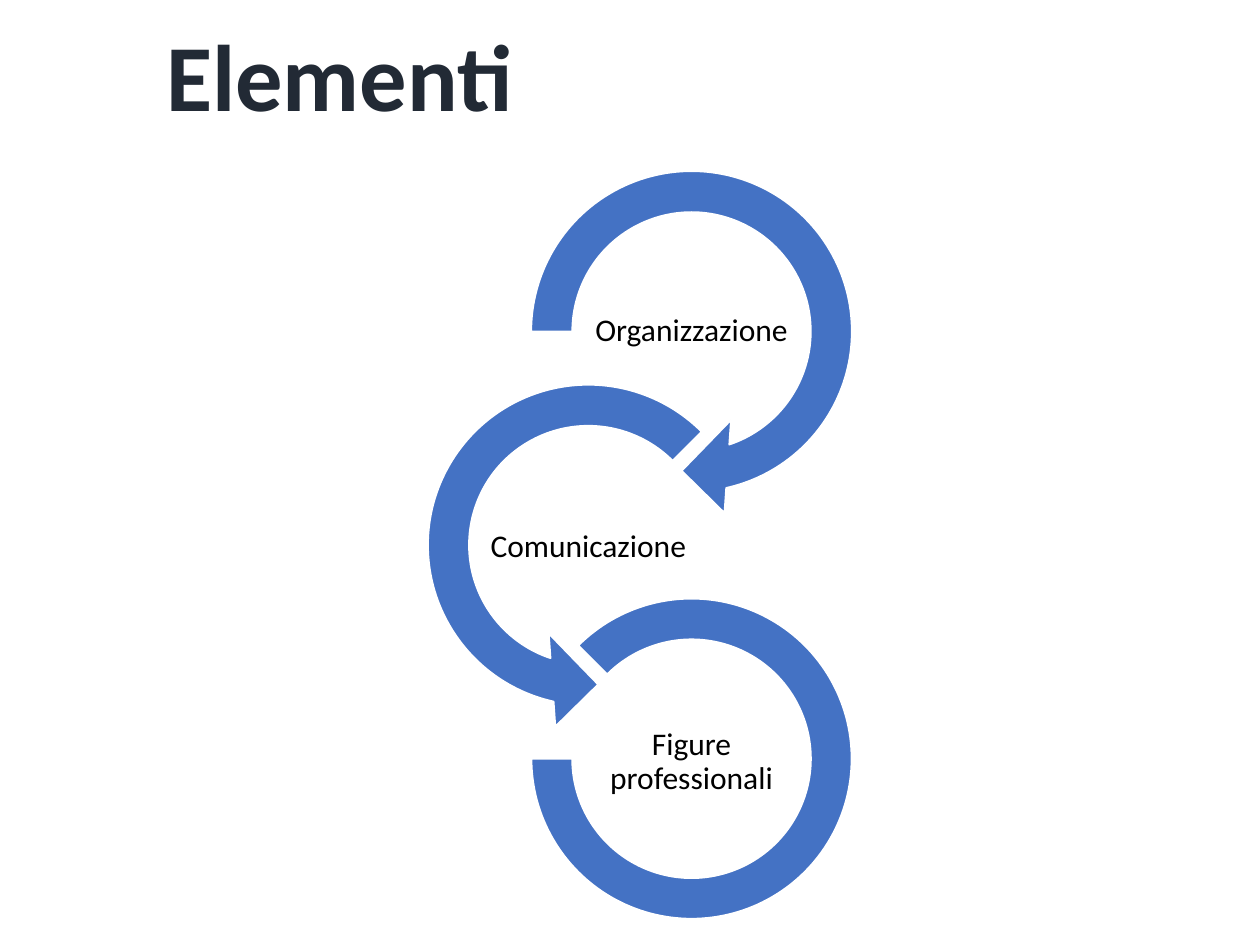
from pptx import Presentation
from pptx.dml.color import RGBColor
from pptx.enum.shapes import MSO_SHAPE as SHAPE
from pptx.enum.text import MSO_ANCHOR as ANCHOR, MSO_AUTO_SIZE as AUTO, PP_ALIGN as ALIGN
from pptx.util import Pt

BLUE = RGBColor(0x44, 0x72, 0xC4)
NAVY = RGBColor(0x22, 0x2A, 0x35)
BLACK = RGBColor(0, 0, 0)
WHITE = RGBColor(0xFF, 0xFF, 0xFF)

RIGHT_X, LEFT_X = 395.2, 336.2
FIRST_Y, STEP_Y = 189.4, 122.1
ARROW_SIZE, ARC_SIZE = 213, 182.9
LABEL_HEIGHT = 59

# preset, size, centre x, adjustments, label, label width
RINGS = [
    (SHAPE.CIRCULAR_ARROW, ARROW_SIZE, RIGHT_X,
     (0.11, 11.42, 45, 108, 0.125), "Organizzazione", 118),
    (SHAPE.LEFT_CIRCULAR_ARROW, ARROW_SIZE, LEFT_X,
     (0.11, 11.42, 63, 189, 0.125), "Comunicazione", 118),
    (SHAPE.BLOCK_ARC, ARC_SIZE, RIGHT_X,
     (135, 108, 0.127), "Figure professionali", 144),
]


def set_all(obj, values):
    for name, value in values.items():
        setattr(obj, name, value)


def centred(x, y, width, height):
    """Return left, top, width and height of a box around a centre."""
    return Pt(x - width / 2), Pt(y - height / 2), Pt(width), Pt(height)


class Deck:
    font = "Calibri"
    label_frame = {"word_wrap": True, "vertical_anchor": ANCHOR.MIDDLE,
                   "margin_left": Pt(1), "margin_right": Pt(1),
                   "margin_top": Pt(1), "margin_bottom": Pt(1)}
    title_frame = {"word_wrap": True, "vertical_anchor": ANCHOR.MIDDLE,
                   "auto_size": AUTO.NONE}

    def __init__(self, width, height):
        self.prs = Presentation()
        set_all(self.prs, {"slide_width": Pt(width), "slide_height": Pt(height)})
        self.s = self.prs.slides.add_slide(self.prs.slide_layouts[5])

    def fill_text(self, tf, text, frame, align, size, color, bold=False):
        set_all(tf, frame)
        p = tf.paragraphs[0]
        set_all(p, {"alignment": align, "line_spacing": 0.9})
        r = p.add_run()
        r.text = text
        set_all(r.font, {"name": self.font, "size": Pt(size), "bold": bold})
        r.font.color.rgb = color

    def title(self, text, left, top, width, height):
        sp = self.s.shapes.title
        set_all(sp, {"left": Pt(left), "top": Pt(top),
                     "width": Pt(width), "height": Pt(height)})
        self.fill_text(sp.text_frame, text, self.title_frame, ALIGN.LEFT, 54, NAVY, True)

    def group(self):
        return self.s.shapes.add_group_shape().shapes

    def ring(self, shapes, preset, x, y, size, adjustments):
        sp = shapes.add_shape(preset, *centred(x, y, size, size))
        for i, value in enumerate(adjustments):
            sp.adjustments[i] = value
        sp.shadow.inherit = False
        sp.fill.solid()
        sp.fill.fore_color.rgb = BLUE
        sp.line.color.rgb = WHITE
        sp.line.width = Pt(1)

    def label(self, shapes, text, x, y, width):
        sp = shapes.add_textbox(*centred(x, y, width, LABEL_HEIGHT))
        self.fill_text(sp.text_frame, text, self.label_frame, ALIGN.CENTER, 18, BLACK)


def main():
    deck = Deck(720, 540)
    deck.title("Elementi", 87.8, 20.9, 548.6, 51.1)
    shapes = deck.group()
    for i, (preset, size, x, adjustments, text, width) in enumerate(RINGS):
        y = FIRST_Y + i * STEP_Y
        deck.ring(shapes, preset, x, y, size, adjustments)
        deck.label(shapes, text, x, y + i, width)
    deck.prs.save("out.pptx")


if __name__ == "__main__":
    main()
